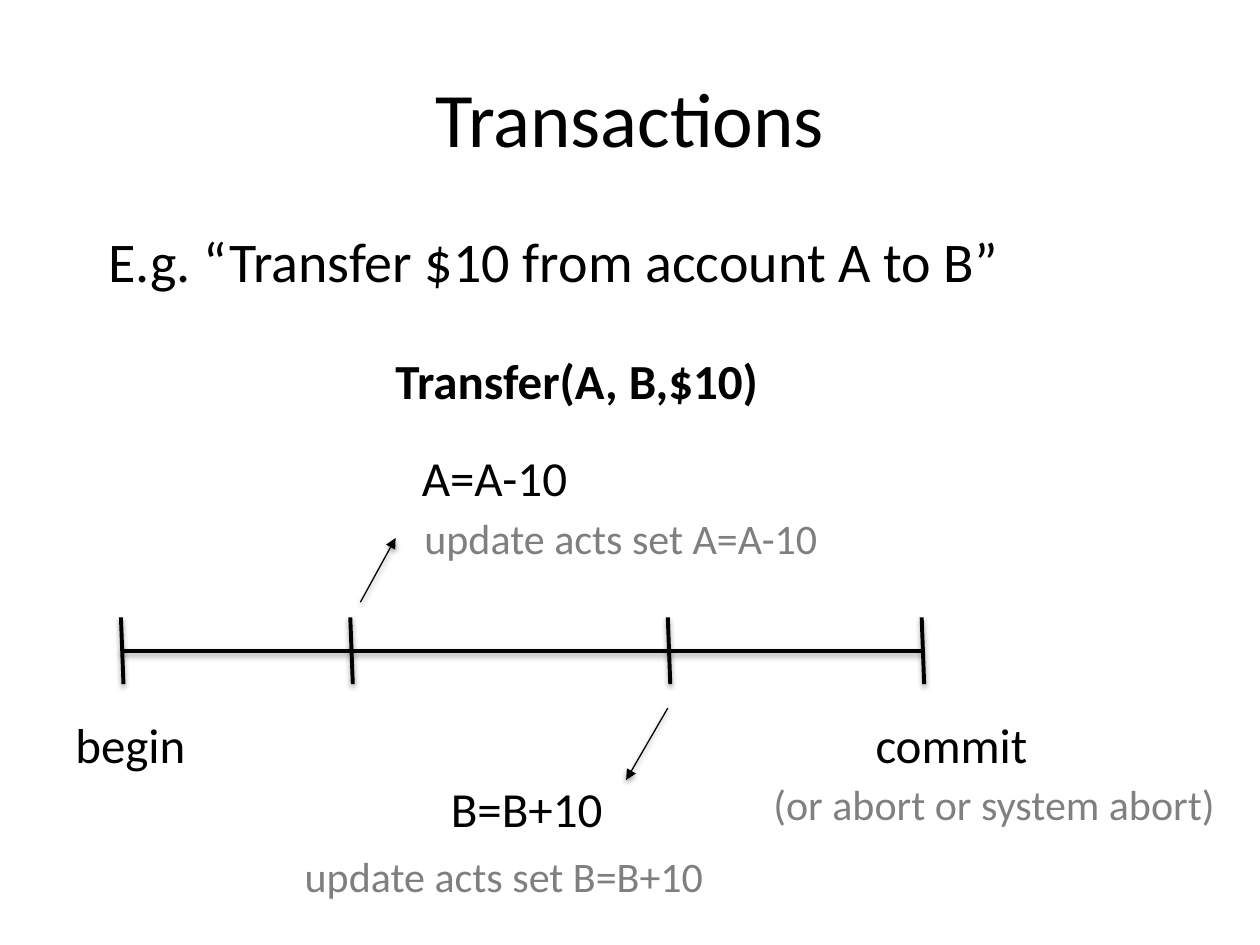
from dataclasses import dataclass

from lxml import etree
from pptx import Presentation
from pptx.dml.color import RGBColor
from pptx.enum.shapes import MSO_CONNECTOR
from pptx.enum.text import MSO_ANCHOR, PP_ALIGN
from pptx.oxml import parse_xml
from pptx.oxml.ns import nsdecls, qn
from pptx.util import Inches, Pt

STRAIGHT = MSO_CONNECTOR.STRAIGHT
MIDDLE, TOP = MSO_ANCHOR.MIDDLE, MSO_ANCHOR.TOP
CENTER, LEFT = PP_ALIGN.CENTER, PP_ALIGN.LEFT
COLUMNS, ROWS = 100, 75
TITLE_ONLY = 5


@dataclass(frozen=True)
class Theme:
    """Colours, font, type sizes and line widths of the slide."""
    font: str = "Calibri"
    ink: str = "000000"
    muted: str = "7F7F7F"
    outcome: str = "808080"
    title: int = 44
    lead: int = 32
    label: int = 28
    detail: int = 24
    axis: float = 2.25
    pointer: float = 0.75


class SlideBuilder:
    """Draws styled elements on one slide, measured in grid columns and rows."""

    def __init__(self, deck, theme):
        self.theme = theme
        self.slide = deck.slides.add_slide(deck.slide_layouts[TITLE_ONLY])
        self.column = deck.slide_width / COLUMNS
        self.row = deck.slide_height / ROWS

    def place(self, left, top, width, height):
        """Turn grid units into slide lengths."""
        return (round(left * self.column), round(top * self.row),
                round(width * self.column), round(height * self.row))

    def fill_text(self, box, words, size, color, bold=False, align=LEFT, anchor=TOP):
        """Put one styled run into a box and return its paragraph."""
        frame = box.text_frame
        frame.vertical_anchor = anchor
        para = frame.paragraphs[0]
        para.alignment = align
        span = para.add_run()
        span.text = words
        span.font.name = self.theme.font
        span.font.size = Pt(size)
        span.font.bold = bold
        span.font.color.rgb = RGBColor.from_string(color)
        return para

    def title(self, words, *area):
        """Fill and move the title placeholder."""
        box = self.slide.shapes.title
        box.left, box.top, box.width, box.height = self.place(*area)
        self.fill_text(box, words, self.theme.title, self.theme.ink,
                       align=CENTER, anchor=MIDDLE)

    def lead(self, words, *area, inset):
        """Add the wrapped introductory sentence."""
        box = self.slide.shapes.add_textbox(*self.place(*area))
        box.text_frame.word_wrap = True
        box.text_frame.margin_left = round(inset * self.column)
        para = self.fill_text(box, words, self.theme.lead, self.theme.ink)
        para.space_before = Pt(self.theme.lead * 0.2)

    def label(self, words, left, top, width, size=None, color=None, bold=False):
        """Add a one-line label whose height follows its type size."""
        size = size or self.theme.label
        height = 5.7 if size == self.theme.label else 5
        box = self.slide.shapes.add_textbox(*self.place(left, top, width, height))
        box.text_frame.word_wrap = False
        self.fill_text(box, words, size, color or self.theme.ink, bold)

    def line(self, start, end, width, arrow=False):
        """Add a softly shadowed line, with an arrowhead at its end if asked."""
        link = self.slide.shapes.add_connector(
            STRAIGHT, *self.place(*start, *end))
        link.line.width = Pt(width)
        link.line.color.rgb = RGBColor.from_string(self.theme.ink)
        properties = link._element.spPr
        if arrow:
            stroke = properties.find(qn("a:ln"))
            etree.SubElement(stroke, qn("a:tailEnd"), type="triangle")
        properties.append(parse_xml(
            f'<a:effectLst {nsdecls("a")}><a:outerShdw blurRad="40000" '
            'dist="20000" dir="5400000" rotWithShape="0">'
            f'<a:srgbClr val="{self.theme.ink}"><a:alpha val="38000"/>'
            '</a:srgbClr></a:outerShdw></a:effectLst>'))


def main():
    """Build and save the transaction timeline slide."""
    deck = Presentation()
    deck.slide_width, deck.slide_height = Inches(10), Inches(7.5)
    theme = Theme()
    page = SlideBuilder(deck, theme)

    page.title("Transactions", 5, 3, 90, 12.5)
    page.lead("E.g. “Transfer $10 from account A to B”",
              5, 17.5, 90, 9, inset=3.6)

    page.line((9.6, 51.7), (73.1, 51.7), theme.axis)
    for tick in (9.6, 27.8, 53, 73.15):
        page.line((tick, 49), (tick + 0.2, 54.3), theme.axis)
    for start, end in (((28.6, 47.8), (31.4, 42.7)), ((53, 56.2), (49.7, 61.9))):
        page.line(start, end, theme.pointer, arrow=True)

    page.label("Transfer(A, B,$10)", 30.4, 27.3, 31.5, bold=True)
    for words, left, top, width in (
            ("begin", 5, 56.2, 10.8),
            ("commit", 68.5, 56.2, 14.2),
            ("A=A-10", 32.5, 35, 13.7),
            ("B=B+10", 34.8, 61.3, 14.2)):
        page.label(words, left, top, width)
    for words, left, top, width, color in (
            ("(or abort or system abort)", 60.4, 61.3, 37.6, theme.outcome),
            ("update acts set A=A-10", 32.7, 40.2, 33.6, theme.muted),
            ("update acts set B=B+10", 23.2, 67, 34.2, theme.muted)):
        page.label(words, left, top, width, theme.detail, color)

    deck.save("out.pptx")


main()
